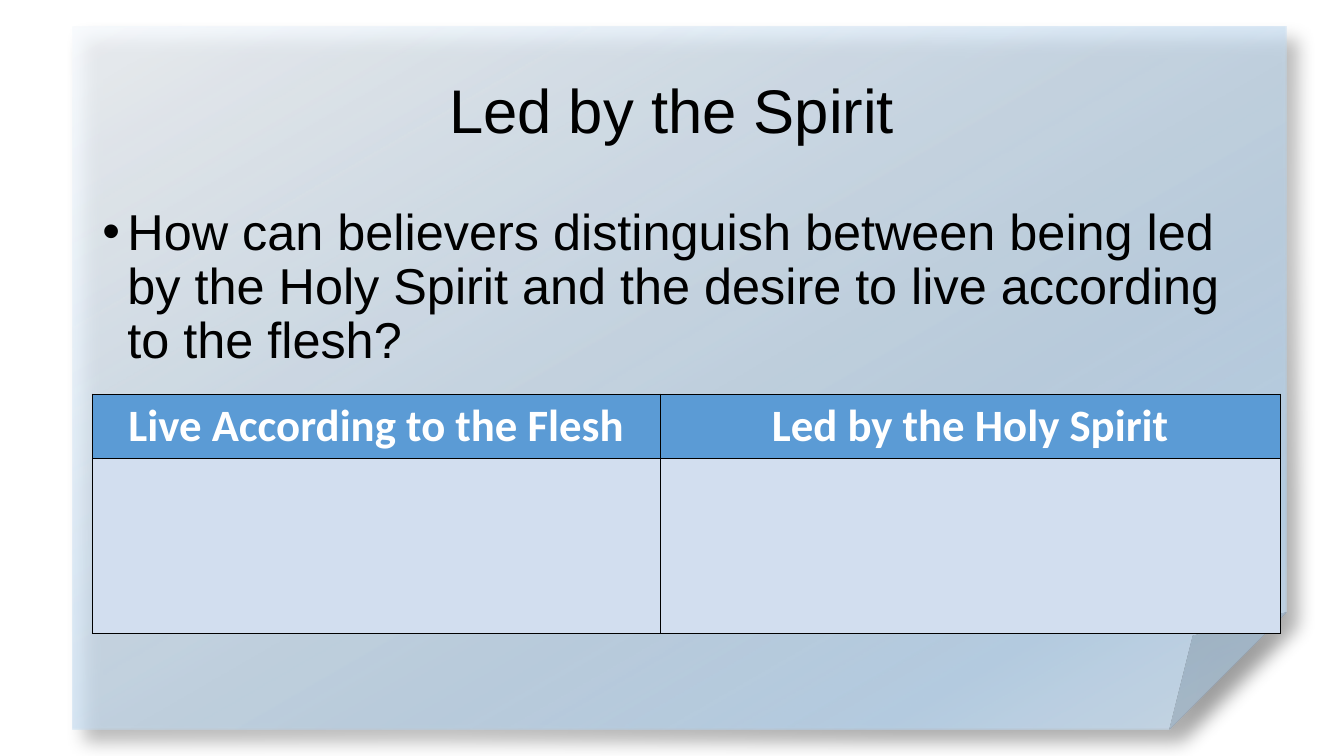
from pptx import Presentation
from pptx.dml.color import RGBColor
from pptx.enum.shapes import MSO_SHAPE
from pptx.enum.text import MSO_ANCHOR, PP_ALIGN
from pptx.oxml.ns import qn
from pptx.util import Pt
from lxml.etree import SubElement

BLACK, WHITE = "000000", "FFFFFF"
HEADER_BLUE, BODY_BLUE = "5B9BD5", "D2DEEF"
# Position, colour and opacity, all but the colour in percent
PAPER_STOPS = [(0, "F7FAFD", 80), (64, "B5D2EC", 63), (83, "B5D2EC", 79), (100, "CEE1F2", 77)]


def rgb(color):
    return RGBColor.from_string(color)


def add_element(parent, tag, **attributes):
    return SubElement(parent, qn(tag), {name: str(value) for name, value in attributes.items()})


def add_alpha_color(parent, color, opacity):
    color_element = add_element(parent, "a:srgbClr", val=color)
    add_element(color_element, "a:alpha", val=opacity * 1000)


def add_folded_paper(slide, left, top, width, height):
    shape = slide.shapes.add_shape(MSO_SHAPE.FOLDED_CORNER, Pt(left), Pt(top), Pt(width), Pt(height))
    shape.line.fill.background()
    shape.fill.gradient()
    gradient = shape._element.spPr.find(qn("a:gradFill"))
    for child in list(gradient):
        gradient.remove(child)
    stops = add_element(gradient, "a:gsLst")
    for position, color, opacity in PAPER_STOPS:
        add_alpha_color(add_element(stops, "a:gs", pos=position * 1000), color, opacity)
    add_element(gradient, "a:lin", ang=60 * 60000, scaled=0)

    shape.shadow.inherit = False
    effects = shape._element.spPr.find(qn("a:effectLst"))
    shadow = add_element(effects, "a:outerShdw", blurRad=Pt(13), dist=Pt(13),
                         dir=45 * 60000, algn="tl", rotWithShape=0)
    add_alpha_color(shadow, BLACK, 40)


def style_paragraph(paragraph, text, size, font="Arial", color=BLACK, bold=False):
    paragraph.text = text
    paragraph.font.size = Pt(size)
    paragraph.font.name = font
    paragraph.font.bold = bold
    paragraph.font.color.rgb = rgb(color)


def add_text(slide, left, top, width, height, text, size, anchor=MSO_ANCHOR.TOP,
             align=PP_ALIGN.LEFT, bulleted=False):
    frame = slide.shapes.add_textbox(Pt(left), Pt(top), Pt(width), Pt(height)).text_frame
    frame.word_wrap = True
    frame.vertical_anchor = anchor
    paragraph = frame.paragraphs[0]
    paragraph.alignment = align
    paragraph.line_spacing = 0.9
    if bulleted:
        properties = paragraph._p.get_or_add_pPr()
        properties.set("marL", str(Pt(18)))
        properties.set("indent", str(-Pt(18)))
        add_element(properties, "a:buFont", typeface="Arial")
        add_element(properties, "a:buChar", char="•")
    style_paragraph(paragraph, text, size)


def style_cell(cell, fill):
    """Give the cell thin black borders and a plain fill."""
    properties = cell._tc.get_or_add_tcPr()
    for side in ("a:lnL", "a:lnR", "a:lnT", "a:lnB"):
        border = add_element(properties, side, w=Pt(1))
        add_element(add_element(border, "a:solidFill"), "a:srgbClr", val=BLACK)
    cell.fill.solid()
    cell.fill.fore_color.rgb = rgb(fill)


def add_comparison_table(slide, left, top, headings, column_widths, row_heights):
    table = slide.shapes.add_table(len(row_heights), len(headings), Pt(left), Pt(top),
                                   Pt(sum(column_widths)), Pt(sum(row_heights))).table
    for row, height in zip(table.rows, row_heights):
        row.height = Pt(height)
    for index, (heading, width) in enumerate(zip(headings, column_widths)):
        table.columns[index].width = Pt(width)
        header = table.cell(0, index)
        style_cell(header, HEADER_BLUE)
        paragraph = header.text_frame.paragraphs[0]
        paragraph.alignment = PP_ALIGN.CENTER
        style_paragraph(paragraph, heading, 32, "Calibri", WHITE, bold=True)
        style_cell(table.cell(1, index), BODY_BLUE)


def main():
    presentation = Presentation()
    presentation.slide_width, presentation.slide_height = Pt(960), Pt(540)
    slide = presentation.slides.add_slide(presentation.slide_layouts[6])
    add_folded_paper(slide, 51.6, 19.4, 867.6, 501.8)
    add_text(slide, 66, 28.8, 828, 104.4, "Led by the Spirit", 44,
             anchor=MSO_ANCHOR.MIDDLE, align=PP_ALIGN.CENTER)
    add_text(slide, 66, 144, 828, 342.6,
             "How can believers distinguish between being led by the Holy Spirit "
             "and the desire to live according to the flesh?", 36, bulleted=True)
    add_comparison_table(slide, 66, 281.5, ["Live According to the Flesh", "Led by the Holy Spirit"],
                         column_widths=[405.8, 442.8], row_heights=[46.2, 124.6])
    presentation.save("out.pptx")


if __name__ == "__main__":
    main()
